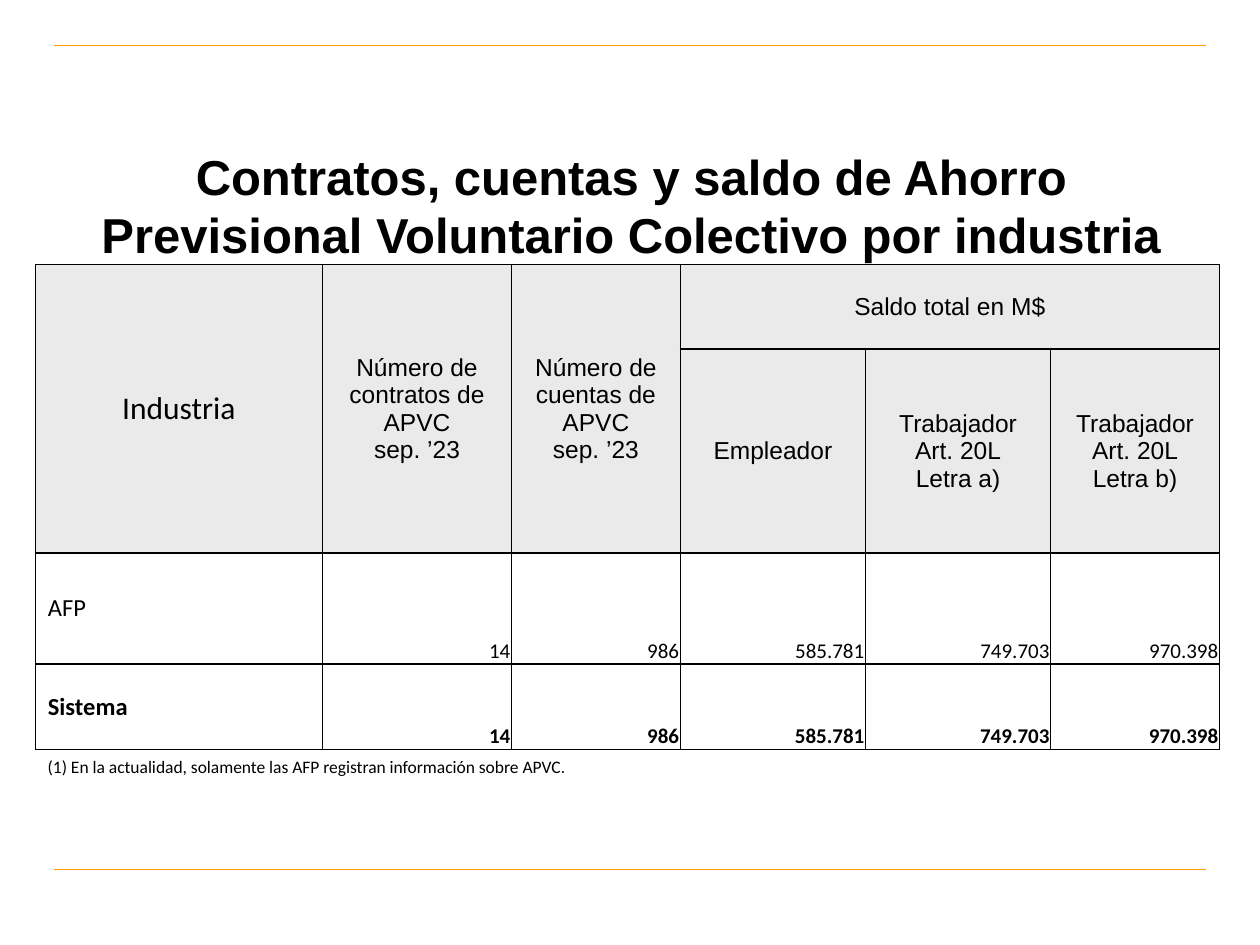
from lxml import etree
from pptx import Presentation
from pptx.dml.color import RGBColor
from pptx.enum.shapes import MSO_CONNECTOR
from pptx.enum.text import MSO_ANCHOR, PP_ALIGN
from pptx.oxml.ns import qn
from pptx.util import Inches, Pt

LINE = MSO_CONNECTOR.STRAIGHT
TOP, MIDDLE, BOTTOM = MSO_ANCHOR.TOP, MSO_ANCHOR.MIDDLE, MSO_ANCHOR.BOTTOM
LEFT, CENTER, RIGHT = PP_ALIGN.LEFT, PP_ALIGN.CENTER, PP_ALIGN.RIGHT

BLACK, WHITE, GREY, ORANGE = "000000", "FFFFFF", "EAEAEA", "FF9900"
WIDE = (0.1, 0.05, 0.1, 0.05)
TIGHT = (0.01, 0.01, 0.01, 0)
COLS = [2.28, 1.5, 1.34, 1.47, 1.47, 1.34]
ROWS = [0.67, 1.62, 0.88, 0.68]
MERGES = [(0, 0, 1, 0), (0, 1, 1, 1), (0, 2, 1, 2), (0, 3, 0, 5)]
HEADS = [
    (0, 0, ["Industria"], 18, "Calibri"),
    (0, 1, ["Número de contratos de APVC", "sep. ’23"], 14, "Arial"),
    (0, 2, ["Número de cuentas de APVC", "sep. ’23"], 14, "Arial"),
    (0, 3, ["Saldo total en M$"], 14, "Arial"),
    (1, 3, ["Empleador"], 14, "Arial"),
    (1, 4, ["Trabajador", "Art. 20L", "Letra a)"], 14, "Arial"),
    (1, 5, ["Trabajador", "Art. 20L", "Letra b)"], 14, "Arial"),
]
VALUES = ["14", "986", "585.781", "749.703", "970.398"]


def color(code):
    """Turn a hex string into a colour."""
    return RGBColor.from_string(code)


def box(left, top, width, height):
    """Give a place and size in inches."""
    return [Inches(n) for n in (left, top, width, height)]


def add_run(para, text, size, font, bold=False):
    """Add one black run to a paragraph."""
    run = para.add_run()
    run.text = text
    run.font.size = Pt(size)
    run.font.name = font
    run.font.bold = bold
    run.font.color.rgb = color(BLACK)


def add_rule(slide, top):
    """Draw an orange rule across the slide."""
    rule = slide.shapes.add_connector(
        LINE, Inches(0.43), Inches(top), Inches(9.57), Inches(top))
    rule.line.color.rgb = color(ORANGE)
    rule.line.width = Pt(0.75)
    etree.SubElement(rule._element.spPr, qn("a:effectLst"))


def add_title(slide, text):
    """Place and fill the title."""
    title = slide.shapes.title
    title.left, title.top, title.width, title.height = box(0.51, 1.16, 9, 1.25)
    frame = title.text_frame
    frame.word_wrap = True
    frame.vertical_anchor = TOP
    frame.margin_top = 0
    para = frame.paragraphs[0]
    para.alignment = CENTER
    add_run(para, text, 28, "Arial", True)


def style_cell(cell, fill):
    """Set the fill and the four borders of a cell."""
    props = cell._tc.get_or_add_tcPr()
    for tag in ("a:lnL", "a:lnR", "a:lnT", "a:lnB"):
        edge = etree.SubElement(props, qn(tag), w=str(Pt(1)))
        solid = etree.SubElement(edge, qn("a:solidFill"))
        etree.SubElement(solid, qn("a:srgbClr"), val=BLACK)
    cell.fill.solid()
    cell.fill.fore_color.rgb = color(fill)


def fill_cell(cell, lines, size, font, align, anchor, inset, bold=False):
    """Write the lines of a cell, one paragraph each."""
    cell.vertical_anchor = anchor
    (cell.margin_left, cell.margin_top,
     cell.margin_right, cell.margin_bottom) = box(*inset)
    frame = cell.text_frame
    for i, line in enumerate(lines):
        para = frame.add_paragraph() if i else frame.paragraphs[0]
        para.alignment = align
        add_run(para, line, size, font, bold)


def add_grid(slide):
    """Build the table of contracts, accounts and balances."""
    table = slide.shapes.add_table(
        len(ROWS), len(COLS), *box(0.28, 2.1, sum(COLS), sum(ROWS))).table
    for col, width in zip(table.columns, COLS):
        col.width = Inches(width)
    for i, height in enumerate(ROWS):
        table.rows[i].height = Inches(height)
        for j in range(len(COLS)):
            style_cell(table.cell(i, j), GREY if i < 2 else WHITE)
    for top, left, low, right in MERGES:
        table.cell(top, left).merge(table.cell(low, right))
    for i, j, lines, size, font in HEADS:
        fill_cell(table.cell(i, j), lines, size, font, CENTER, MIDDLE, WIDE)
    for i, name, bold in ((2, "AFP", False), (3, "Sistema", True)):
        fill_cell(table.cell(i, 0), [name], 14, "Calibri",
                  LEFT, MIDDLE, WIDE, bold)
        for j, value in enumerate(VALUES, 1):
            fill_cell(table.cell(i, j), [value], 12, "Calibri",
                      RIGHT, BOTTOM, TIGHT, bold)


def add_note(slide):
    """Add the footnote under the table."""
    frame = slide.shapes.add_textbox(*box(0.28, 5.95, 9.41, 0.27)).text_frame
    frame.word_wrap = True
    para = frame.paragraphs[0]
    add_run(para, "(1) En la actualidad, solamente las AFP registran "
            "información sobre APVC", 10, "Calibri")
    add_run(para, ".", 10, "Arial")


def main():
    """Build and save the slide."""
    deck = Presentation()
    deck.slide_width, deck.slide_height = Inches(10), Inches(7.5)
    slide = deck.slides.add_slide(deck.slide_layouts[5])
    for top in (0.36, 6.9):
        add_rule(slide, top)
    add_title(slide, "Contratos, cuentas y saldo de Ahorro "
              "Previsional Voluntario Colectivo por industria")
    add_grid(slide)
    add_note(slide)
    deck.save("out.pptx")


if __name__ == "__main__":
    main()
